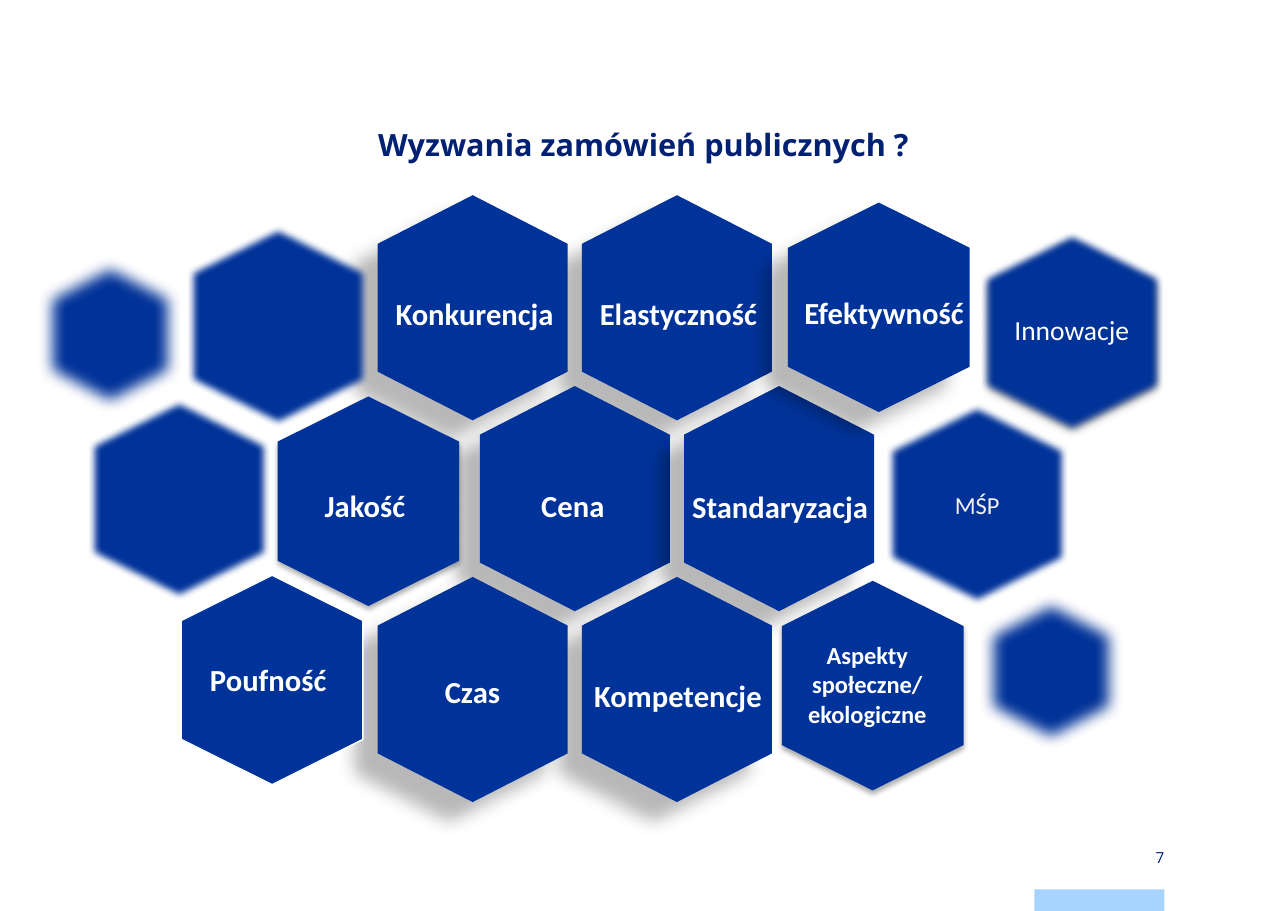
from lxml.etree import SubElement as Sub
from pptx import Presentation
from pptx.dml.color import RGBColor
from pptx.enum.shapes import MSO_SHAPE as Form
from pptx.enum.text import MSO_ANCHOR as Anchor, PP_ALIGN as Align
from pptx.oxml.ns import qn
from pptx.util import Cm, Pt

NAVY = RGBColor(0x00, 0x20, 0x73)
BLUE = RGBColor(0x00, 0x33, 0x99)
SKY = RGBColor(0xA6, 0xD3, 0xFF)
WHITE = RGBColor(0xFF, 0xFF, 0xFF)
PALE = RGBColor(0xF2, 0xF2, 0xF2)

# Shadows: opacity in percent, blur and distance in points, angle in degrees
DEEP = (28, 11.8, 19.7, 141)
LOW = (32, 3.5, 2.2, 90)
NEAR = (40, 4, 3, 90)

BIG = (4.38, 5.19)
MID = (4.19, 4.83)
SMALL = (3.3, 4.01)
STEP, RISE = 4.71, 4.4  # pitch of the central honeycomb
SHOULDER = 0.216  # height of a hexagon's upper corners, as a share of its height

# Left, top, shadow, white edge
RING = [
    (6.4, 9.14, LOW, False),
    (18.17, 4.67, DEEP, False),
    (18.03, 13.39, LOW, False),
    (4.18, 13.26, None, True),
]
# Left, top, size, shadow, softness in points
SOFT = [
    (4.31, 5.11, MID, None, 5),
    (22.62, 5.23, MID, NEAR, 5),
    (20.44, 9.2, MID, None, 5),
    (2.04, 9.09, MID, None, 5),
    (0.89, 5.71, SMALL, None, 10),
    (22.58, 13.47, SMALL, None, 10),
]
BOLD = dict(size=Pt(20), name="Calibri", bold=True)
# Words, left, top, width
LABELS = [
    ("Konkurencja", 8.38, 6.68, 5.13),
    ("Elastyczność", 13.51, 6.68, 4.27),
    ("Cena", 11.18, 11.1, 4.06),
    ("Jakość", 6.6, 11.1, 3.63),
    ("Standaryzacja", 15.49, 11.13, 5),
    ("Czas", 8.71, 15.39, 4.37),
    ("Kompetencje", 13.11, 15.49, 5.05),
    ("Efektywność", 18.16, 6.65, 4.45),
    ("Poufność", 4.04, 15.11, 4.29),
]


class Sheet:
    def __init__(self, slide):
        self.shapes = slide.shapes

    def hexa(self, left, top, size, shadow=None, edge=False, soft=0):
        """Draw a pointy-topped hexagon."""
        wide, high = size
        right, mid = left + wide, left + wide / 2
        upper, lower = top + high * SHOULDER, top + high * (1 - SHOULDER)
        spots = [(right, upper), (right, lower), (mid, top + high),
                 (left, lower), (left, upper)]
        pen = self.shapes.build_freeform(Cm(mid), Cm(top))
        pen.add_line_segments([(Cm(x), Cm(y)) for x, y in spots], close=True)
        shape = pen.convert_to_shape()
        self.paint(shape, BLUE)
        if edge:
            shape.line.color.rgb = WHITE
            shape.line.width = Pt(1)
        fx = shape._element.spPr.find(qn("a:effectLst"))
        if shadow:
            alpha, blur, dist, angle = shadow
            cast = Sub(fx, qn("a:outerShdw"), blurRad=str(Pt(blur)), dist=str(Pt(dist)),
                       dir=str(angle * 60000), algn="ctr", rotWithShape="0")
            tint = Sub(cast, qn("a:srgbClr"), val="000000")
            Sub(tint, qn("a:alpha"), val=str(alpha * 1000))
        if soft:
            Sub(fx, qn("a:softEdge"), rad=str(Pt(soft)))

    def paint(self, shape, color):
        shape.shadow.inherit = False
        shape.fill.solid()
        shape.fill.fore_color.rgb = color
        shape.line.fill.background()

    def bar(self, box, color):
        shape = self.shapes.add_shape(Form.RECTANGLE, *map(Cm, box))
        self.paint(shape, color)

    def text(self, words, box, style, color=WHITE, align=Align.CENTER, frame=None, space=None):
        area = self.shapes.add_textbox(*map(Cm, box)).text_frame
        area.word_wrap = True
        for key, value in (frame or {}).items():
            setattr(area, key, value)
        para = area.paragraphs[0]
        para.alignment = align
        para.line_spacing = space
        run = para.add_run()
        run.text = words
        for key, value in style.items():
            setattr(run.font, key, value)
        run.font.color.rgb = color


def main():
    deck = Presentation()
    deck.slide_width, deck.slide_height = Cm(29.7), Cm(21)
    sheet = Sheet(deck.slides.add_slide(deck.slide_layouts[6]))

    flush = dict(margin_left=0, margin_right=0, margin_top=0, margin_bottom=0)
    sheet.bar((23.85, 20.5, 3, 0.5), SKY)
    sheet.text("Wyzwania zamówień publicznych ?", (2.84, 2.49, 24, 1.6),
               dict(size=Pt(20), name="Open Sans", bold=True), NAVY,
               frame=flush, space=Pt(36))
    sheet.text("7", (23.85, 19.51, 3, 0.5), dict(size=Pt(10), name="Open Sans"),
               NAVY, Align.RIGHT, flush | dict(vertical_anchor=Anchor.MIDDLE))

    # The middle row is shifted by half a step and stacked left to right
    for row, order in enumerate([(1, 0), (0.5, 1.5), (1, 0)]):
        for col in order:
            sheet.hexa(8.71 + col * STEP, 4.5 + row * RISE, BIG, DEEP)
    for left, top, shadow, edge in RING:
        sheet.hexa(left, top, MID, shadow, edge)
    for words, left, top, wide in LABELS:
        sheet.text(words, (left, top, wide, 1.11), BOLD)
    sheet.text("Aspekty społeczne/ ekologiczne", (18.16, 14.63, 3.68, 2.31),
               BOLD | dict(size=Pt(16)))
    for left, top, size, shadow, soft in SOFT:
        sheet.hexa(left, top, size, shadow, True, soft)
    sheet.text("MŚP", (20.96, 11.18, 3.15, 0.94), dict(size=Pt(16), name="Calibri"), PALE)
    sheet.text("Innowacje", (22.86, 7.09, 3.71, 1.03), dict(size=Pt(18), name="Calibri"))
    deck.save("out.pptx")


if __name__ == "__main__":
    main()
